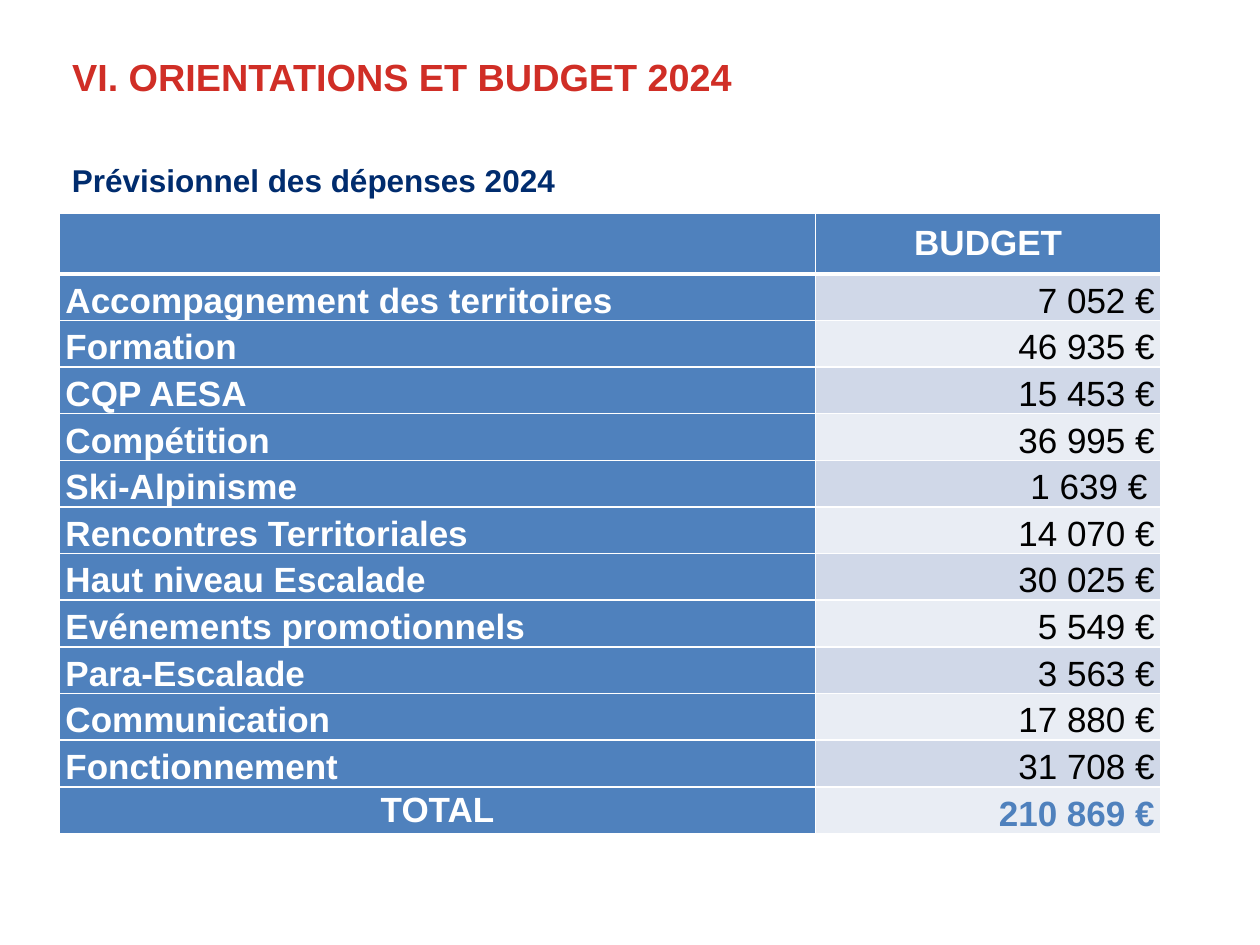
from lxml import etree
from pptx import Presentation
from pptx.dml.color import RGBColor
from pptx.enum.text import MSO_ANCHOR, PP_ALIGN
from pptx.oxml.ns import qn
from pptx.util import Cm, Pt

LEFT, CENTER, RIGHT = PP_ALIGN.LEFT, PP_ALIGN.CENTER, PP_ALIGN.RIGHT
MIDDLE, BOTTOM = MSO_ANCHOR.MIDDLE, MSO_ANCHOR.BOTTOM
TITLE_ONLY = 5

RED, NAVY, BLUE = "D02E26", "002C6E", "4F81BD"
WHITE, BLACK = "FFFFFF", "000000"
BANDS = ["D0D8E8", "E9EDF4"]


def rgb(color):
    return RGBColor.from_string(color)


def write(tf, text, size, color, bold=True, align=LEFT):
    tf.text = text
    p = tf.paragraphs[0]
    p.alignment = align
    p.space_before = Pt(0)
    for r in p.runs:
        r.font.name = "Arial"
        r.font.size = Pt(size)
        r.font.bold = bold
        r.font.color.rgb = rgb(color)


prs = Presentation()
prs.slide_width, prs.slide_height = Cm(25.4), Cm(19.05)
s = prs.slides.add_slide(prs.slide_layouts[TITLE_ONLY])

# Title and subtitle
title = s.shapes.title
title.left, title.top, title.width, title.height = Cm(1.2), Cm(0.97), Cm(22.2), Cm(1.15)
subtitle = s.shapes.add_textbox(Cm(1.2), Cm(3.1), Cm(22.2), Cm(1.07))
for sp, text, size, color in [
    (title, "VI. ORIENTATIONS ET BUDGET 2024", 21.6, RED),
    (subtitle, "Prévisionnel des dépenses 2024", 18, NAVY),
]:
    tf = sp.text_frame
    tf.word_wrap = True
    tf.vertical_anchor = MIDDLE
    write(tf, text, size, color)

# Budget table
rows = [
    ("", "BUDGET"),
    ("Accompagnement des territoires", "7 052 €"),
    ("Formation", "46 935 €"),
    ("CQP AESA", "15 453 €"),
    ("Compétition", "36 995 €"),
    ("Ski-Alpinisme", "1 639 €"),
    ("Rencontres Territoriales", "14 070 €"),
    ("Haut niveau Escalade", "30 025 €"),
    ("Evénements promotionnels", "5 549 €"),
    ("Para-Escalade", "3 563 €"),
    ("Communication", "17 880 €"),
    ("Fonctionnement", "31 708 €"),
    ("TOTAL", "210 869 €"),
]
total = len(rows) - 1
table = s.shapes.add_table(len(rows), 2, Cm(1.2), Cm(4.3), Cm(22.2), Cm(12.52)).table
table.columns[0].width, table.columns[1].width = Cm(15.24), Cm(6.96)

for i, row in enumerate(rows):
    table.rows[i].height = Cm(1.22 if i == 0 else 0.94)
    for j, text in enumerate(row):
        cell = table.cell(i, j)
        cell.margin_left = cell.margin_right = Cm(0.12)
        cell.margin_top = cell.margin_bottom = 0

        # White borders, thicker under the header
        tc_pr = cell._tc.get_or_add_tcPr()
        for side in ("lnL", "lnR", "lnT", "lnB"):
            thick = (i, side) in [(0, "lnB"), (1, "lnT")]
            ln = etree.SubElement(tc_pr, qn("a:" + side), w=str(Pt(3 if thick else 1)))
            fill = etree.SubElement(ln, qn("a:solidFill"))
            etree.SubElement(fill, qn("a:srgbClr"), val=WHITE)

        # Blue header row and label column, banded amounts
        amount = i > 0 and j == 1
        cell.fill.solid()
        cell.fill.fore_color.rgb = rgb(BANDS[(i - 1) % 2] if amount else BLUE)
        if amount:
            color, align = (BLUE if i == total else BLACK), RIGHT
        else:
            color, align = WHITE, (CENTER if i in (0, total) else LEFT)
        centered = align == CENTER
        cell.vertical_anchor = MIDDLE if centered else BOTTOM
        write(cell.text_frame, text, 20, color, not amount or i == total, align)

# The Ski-Alpinisme amount sits slightly further from the edge
table.cell(5, 1).margin_right = Cm(0.27)

prs.save("out.pptx")
